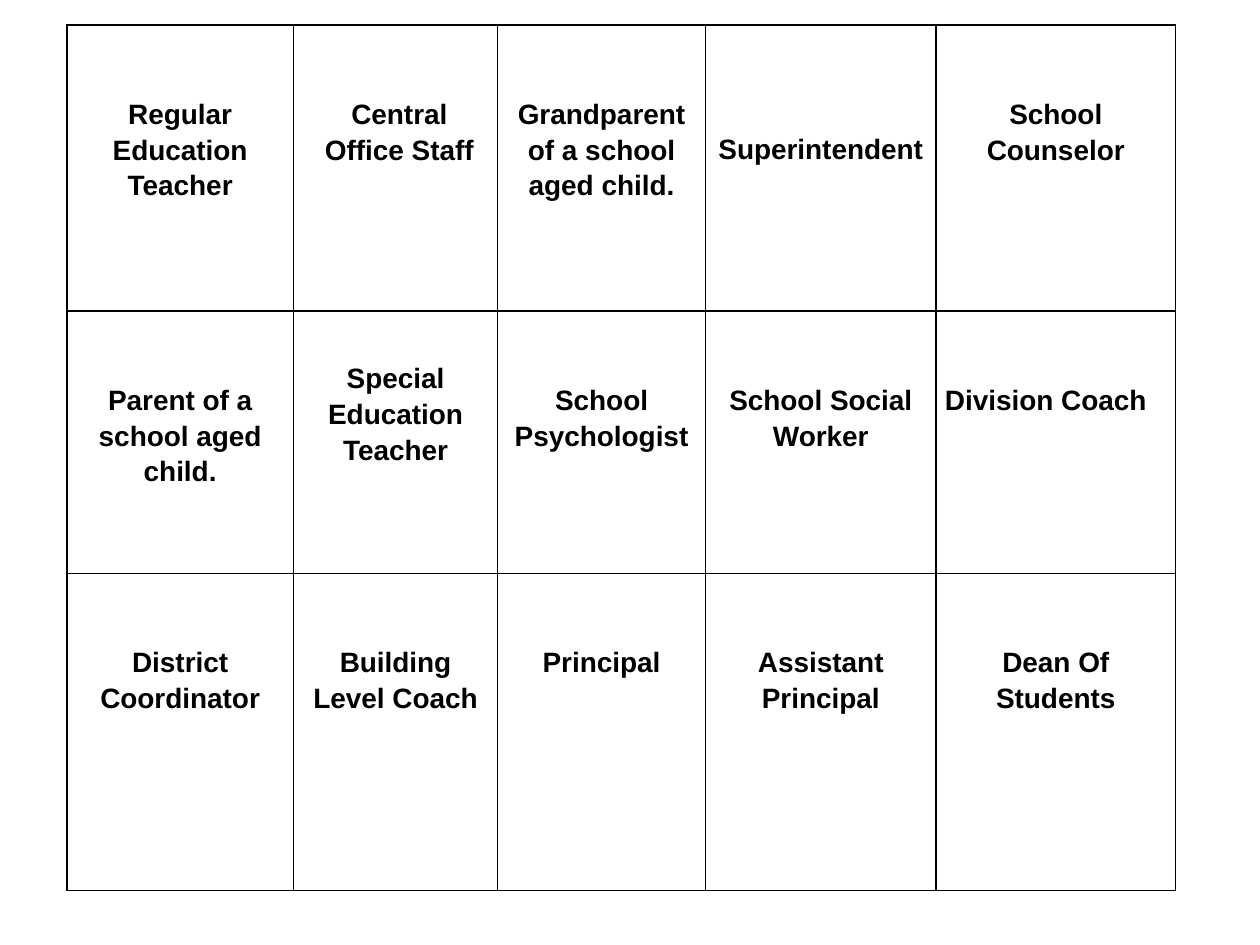
from dataclasses import dataclass

from lxml.etree import SubElement
from pptx import Presentation
from pptx.dml.color import RGBColor
from pptx.enum.text import PP_ALIGN
from pptx.oxml.ns import qn
from pptx.table import Table, _Cell
from pptx.util import Inches, Pt

COLORS = {"text": "000000", "border": "000000", "cell": "FFFFFF"}
COLUMN_WIDTHS = [1.8, 1.62, 1.65, 1.83, 1.9]
ROW_HEIGHTS = [2.27, 2.08, 2.52]
TABLE_LEFT, TABLE_TOP = 0.53, 0.2
SIDE_MARGIN, END_MARGIN = 0.07, 0.1
LINE_HEIGHT = 0.28
PARAGRAPH_GAP = 0.17
FONT_FORMAT = {"name": "Arial", "size": Pt(16), "bold": True}


@dataclass(frozen=True)
class RoleCard:
    role: str
    lines_above: int = 1
    gap_above: float = PARAGRAPH_GAP
    left_margin: float = SIDE_MARGIN
    align: PP_ALIGN = PP_ALIGN.CENTER


CARDS = [
    [
        RoleCard("Regular Education Teacher"),
        RoleCard("Central Office Staff", left_margin=0.13),
        RoleCard("Grandparent of a school aged child."),
        RoleCard("Superintendent", lines_above=2),
        RoleCard("School Counselor"),
    ],
    [
        RoleCard("Parent of a school aged child."),
        RoleCard("Special Education Teacher", gap_above=0),
        RoleCard("School Psychologist"),
        RoleCard("School Social Worker"),
        RoleCard("Division Coach", align=PP_ALIGN.LEFT),
    ],
    [
        RoleCard("District Coordinator"),
        RoleCard("Building Level Coach"),
        RoleCard("Principal"),
        RoleCard("Assistant Principal"),
        RoleCard("Dean Of Students"),
    ],
]


def add_borders(cell: _Cell) -> None:
    properties = cell._tc.get_or_add_tcPr()
    for position, side in enumerate(("lnL", "lnR", "lnT", "lnB")):
        line = SubElement(properties, qn(f"a:{side}"), w=str(Pt(1)))
        fill = SubElement(line, qn("a:solidFill"))
        SubElement(fill, qn("a:srgbClr"), val=COLORS["border"])
        properties.insert(position, line)


def draw_card(cell: _Cell, card: RoleCard) -> None:
    cell.fill.solid()
    cell.fill.fore_color.rgb = RGBColor.from_string(COLORS["cell"])
    add_borders(cell)
    margins = {
        "margin_left": card.left_margin,
        "margin_right": SIDE_MARGIN,
        "margin_top": END_MARGIN + card.lines_above * LINE_HEIGHT + card.gap_above,
        "margin_bottom": END_MARGIN,
    }
    for name, value in margins.items():
        setattr(cell, name, Inches(value))

    para = cell.text_frame.paragraphs[0]
    para.alignment = card.align
    para.line_spacing = 1.15
    span = para.add_run()
    span.text = card.role
    for name, value in FONT_FORMAT.items():
        setattr(span.font, name, value)
    span.font.color.rgb = RGBColor.from_string(COLORS["text"])


def size_grid(table: Table) -> None:
    for column, width in zip(table.columns, COLUMN_WIDTHS):
        column.width = Inches(width)
    for row, height in zip(table.rows, ROW_HEIGHTS):
        row.height = Inches(height)


def main() -> None:
    deck = Presentation()
    deck.slide_width, deck.slide_height = Inches(10), Inches(7.5)
    page = deck.slides.add_slide(deck.slide_layouts[6])
    table = page.shapes.add_table(
        len(ROW_HEIGHTS), len(COLUMN_WIDTHS),
        Inches(TABLE_LEFT), Inches(TABLE_TOP),
        Inches(sum(COLUMN_WIDTHS)), Inches(sum(ROW_HEIGHTS)),
    ).table
    table.first_row = table.horz_banding = False
    size_grid(table)
    for row, cards in zip(table.rows, CARDS):
        for cell, card in zip(row.cells, cards):
            draw_card(cell, card)
    deck.save("out.pptx")


if __name__ == "__main__":
    main()
